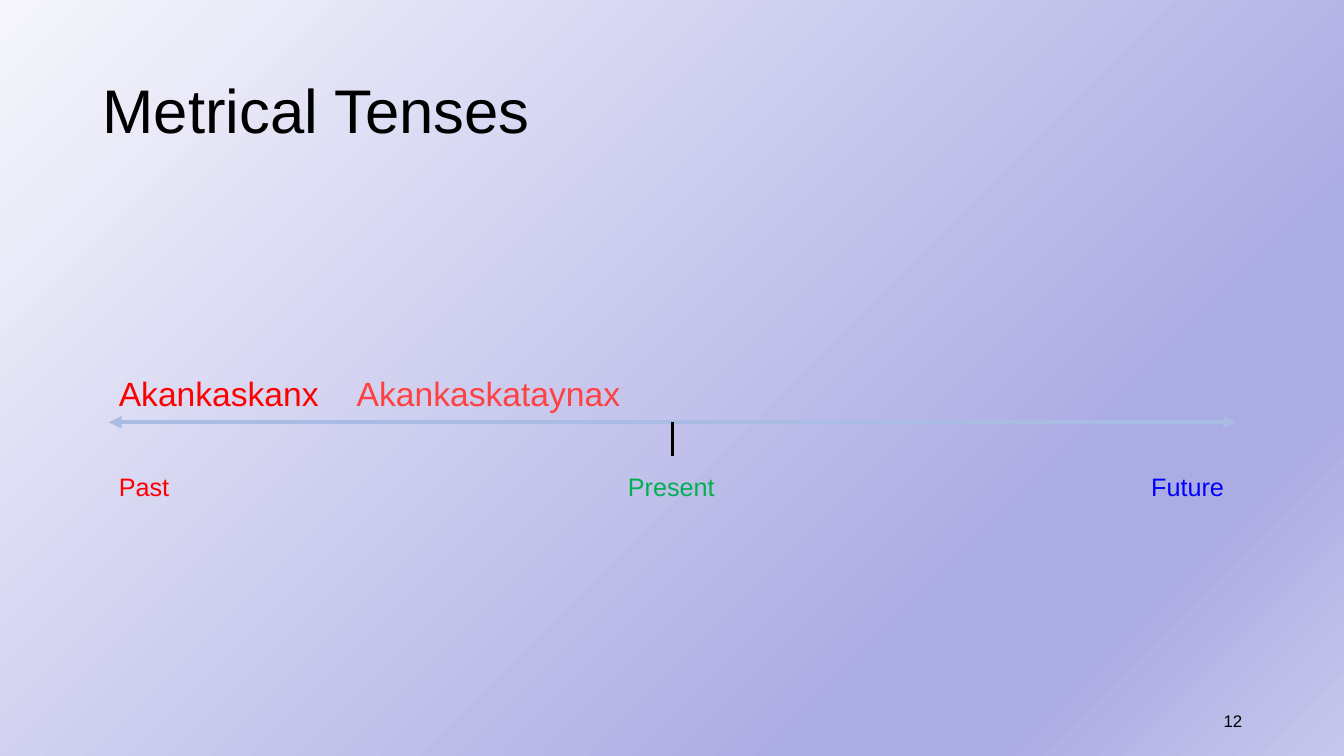
from lxml import etree
from pptx import Presentation
from pptx.dml.color import RGBColor
from pptx.enum import shapes, text
from pptx.oxml import ns
from pptx.util import Inches, Pt

BLACK = RGBColor(0x00, 0x00, 0x00)
RED = RGBColor(0xFF, 0x00, 0x00)
LIGHT_RED = RGBColor(0xFF, 0x41, 0x41)
GREEN = RGBColor(0x00, 0xB0, 0x50)
BLUE = RGBColor(0x00, 0x00, 0xFF)
AXIS_BLUE = RGBColor(0xA9, 0xBD, 0xE4)
PALE = RGBColor(0xF6, 0xF6, 0xFC)
LAVENDER = RGBColor(0xAC, 0xAC, 0xE4)
LIGHT_LAVENDER = RGBColor(0xC7, 0xC7, 0xED)

BACKGROUND_STOPS = [(0, PALE), (74, LAVENDER), (83, LAVENDER), (100, LIGHT_LAVENDER)]
AXIS_LEFT, AXIS_RIGHT, AXIS_TOP = 1.08, 12.26, 4.19
AXIS_MIDDLE = (AXIS_LEFT + AXIS_RIGHT) / 2
VERB_TOP, TIME_TOP = 3.65, 4.63


def paint_background(slide):
    """Fill the slide with the diagonal lavender gradient."""
    fill = slide.background.fill
    fill.gradient()
    fill.gradient_angle = 315
    stop_list = slide.element.find(".//" + ns.qn("a:gsLst"))
    for stop in list(stop_list):
        stop_list.remove(stop)
    for percent, color in BACKGROUND_STOPS:
        stop = etree.SubElement(stop_list, ns.qn("a:gs"), pos=str(percent * 1000))
        etree.SubElement(stop, ns.qn("a:srgbClr"), val=str(color))


def add_text(slide, content, left, top, width, height, size, color=BLACK, wrap=False):
    """Add a one-paragraph text box and return it."""
    shape = slide.shapes.add_textbox(Inches(left), Inches(top), Inches(width), Inches(height))
    frame = shape.text_frame
    frame.word_wrap = wrap
    if wrap:
        frame.vertical_anchor = text.MSO_ANCHOR.MIDDLE
    else:
        frame.auto_size = text.MSO_AUTO_SIZE.SHAPE_TO_FIT_TEXT
    paragraph = frame.paragraphs[0]
    paragraph.text = content
    paragraph.font.name = "Arial"
    paragraph.font.size = Pt(size)
    paragraph.font.color.rgb = color
    return shape


def add_line(slide, start, end, color, width, arrows=False):
    """Add a straight line, with arrowheads at both ends if wanted."""
    ends = [Inches(value) for value in (*start, *end)]
    connector = slide.shapes.add_connector(shapes.MSO_CONNECTOR.STRAIGHT, *ends)
    connector.line.color.rgb = color
    connector.line.width = Pt(width)
    if arrows:
        outline = connector.line._get_or_add_ln()
        for tag in ("a:headEnd", "a:tailEnd"):
            etree.SubElement(outline, ns.qn(tag), type="triangle")
    etree.SubElement(connector.element.spPr, ns.qn("a:effectLst"))


def main():
    """Build the tense timeline slide."""
    presentation = Presentation()
    presentation.slide_width = Inches(13.33)
    presentation.slide_height = Inches(7.5)
    slide = presentation.slides.add_slide(presentation.slide_layouts[6])
    paint_background(slide)

    title = add_text(slide, "Metrical Tenses", 0.92, 0.4, 11.5, 1.45, 44, wrap=True)
    title.text_frame.paragraphs[0].line_spacing = 0.9
    number = add_text(slide, "12", 9.42, 6.95, 3, 0.4, 12, wrap=True)
    number.text_frame.paragraphs[0].alignment = text.PP_ALIGN.RIGHT

    add_line(slide, (AXIS_LEFT, AXIS_TOP), (AXIS_RIGHT, AXIS_TOP), AXIS_BLUE, 3, arrows=True)
    add_line(slide, (AXIS_MIDDLE, AXIS_TOP), (AXIS_MIDDLE, AXIS_TOP + 0.33), BLACK, 2)

    for label, left, width, color in [
        ("Past", AXIS_LEFT, 0.71, RED),
        ("Present", 6.13, 1.07, GREEN),
        ("Future", 11.32, 0.93, BLUE),
    ]:
        add_text(slide, label, left, TIME_TOP, width, 0.4, 18, color)
    for verb, left, width, color in [
        ("Akankaskanx", AXIS_LEFT, 2.21, RED),
        ("Akankaskataynax", 3.44, 2.84, LIGHT_RED),
    ]:
        add_text(slide, verb, left, VERB_TOP, width, 0.5, 24, color)

    presentation.save("out.pptx")


if __name__ == "__main__":
    main()
